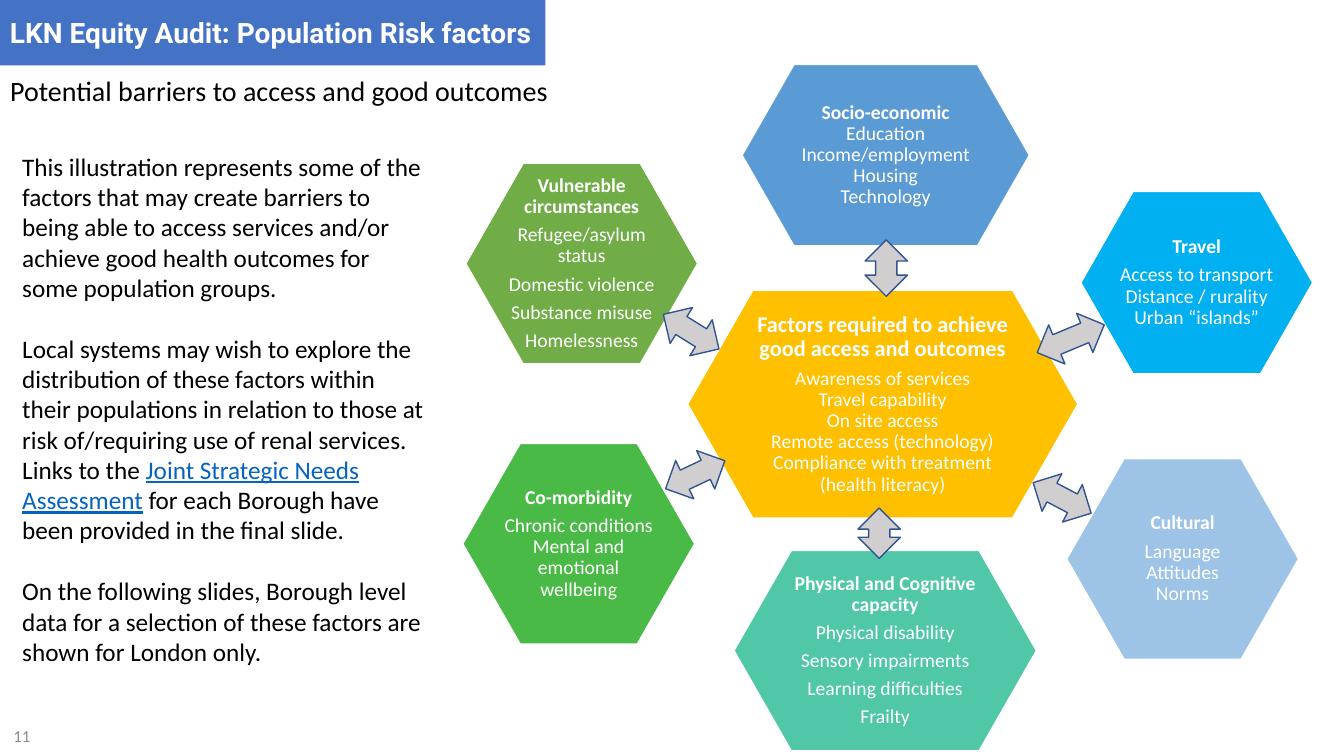
import pptx
import pptx.util
import pptx.dml.color
import pptx.enum.shapes
import pptx.enum.text
import lxml.etree

Inches = pptx.util.Inches
Pt = pptx.util.Pt
RGBColor = pptx.dml.color.RGBColor
Shape = pptx.enum.shapes.MSO_SHAPE
Align = pptx.enum.text.PP_ALIGN
Anchor = pptx.enum.text.MSO_ANCHOR
Fit = pptx.enum.text.MSO_AUTO_SIZE

WHITE = RGBColor(0xFF, 0xFF, 0xFF)
BLACK = RGBColor(0, 0, 0)
BLUE = RGBColor(0x44, 0x72, 0xC4)
LINK = RGBColor(0x05, 0x63, 0xC1)
GREY = RGBColor(0x8C, 0x8C, 0x8C)
SILVER = RGBColor(0xD0, 0xCE, 0xCE)
NAVY = RGBColor(0x32, 0x54, 0x91)
GOLD = RGBColor(0xFF, 0xC0, 0x00)
STEEL = RGBColor(0x5B, 0x9B, 0xD5)
PALE = RGBColor(0x9D, 0xC3, 0xE6)
TEAL = RGBColor(0x50, 0xC8, 0xA7)
SKY = RGBColor(0x00, 0xB0, 0xF0)
GREEN = RGBColor(0x4A, 0xBA, 0x46)
OLIVE = RGBColor(0x70, 0xAD, 0x47)

HEXES = [
    ((6.82, 2.88, 3.87, 2.26), GOLD, 16, 5, 0,
     ["Factors required to achieve good access and outcomes",
      "Awareness of services", "Travel capability", "On site access",
      "Remote access (technology)",
      "Compliance with treatment (health literacy)"]),
    ((7.36, 0.64, 2.85, 1.8), STEEL, 14, 0, 0,
     ["Socio-economic", "Education", "Income/employment", "Housing",
      "Technology"]),
    ((10.58, 4.55, 2.3, 1.99), PALE, 14, 5, 0,
     ["Cultural", "Language", "Attitudes", "Norms"]),
    ((7.28, 5.46, 3, 1.99), TEAL, 14, 5, 5,
     ["Physical and Cognitive capacity", "Physical disability",
      "Sensory impairments", "Learning difficulties", "Frailty"]),
    ((10.72, 1.9, 2.3, 1.81), SKY, 14, 5, 0,
     ["Travel", "Access to transport", "Distance / rurality",
      "Urban “islands”"]),
    ((4.59, 4.4, 2.3, 1.99), GREEN, 14, 5, 0,
     ["Co-morbidity", "Chronic conditions",
      "Mental and emotional wellbeing"]),
    ((4.62, 1.62, 2.3, 1.99), OLIVE, 14, 5, 5,
     ["Vulnerable circumstances", "Refugee/asylum status",
      "Domestic violence", "Substance misuse", "Homelessness"]),
]

ARROWS = [
    (8.51, 2.45, 0.56, 90), (8.47, 5.08, 0.5, 90),
    (10.26, 3.15, 0.72, 157.4), (6.53, 3.08, 0.65, 211.9),
    (6.57, 4.5, 0.65, 154.7), (10.21, 4.73, 0.65, 207.8),
]

STORY = [
    ["This illustration represents some of the factors that may create "
     "barriers to being able to access services and/or achieve good health "
     "outcomes for some population groups."],
    ["Local systems may wish to explore the distribution of these factors "
     "within their populations in relation to those at risk of/requiring "
     "use of renal services. Links to the ",
     "Joint Strategic Needs Assessment",
     " for each Borough have been provided in the final slide."],
    ["On the following slides, Borough level data for a selection of these "
     "factors are shown for London only."],
]


class Deck:
    face = "Calibri"

    def __init__(self):
        self.show = pptx.Presentation()
        self.show.slide_width = Inches(13.33)
        self.show.slide_height = Inches(7.5)
        self.slide = self.show.slides.add_slide(self.show.slide_layouts[1])

    def font(self, para, size, color, bold=False, face=None):
        para.font.name = face or self.face
        para.font.size = Pt(size)
        para.font.bold = bold
        para.font.color.rgb = color

    def place(self, shape, box):
        shape.left, shape.top, shape.width, shape.height = map(Inches, box)

    def shape(self, kind, box, fill, line=None):
        shape = self.slide.shapes.add_shape(kind, *map(Inches, box))
        shape.shadow.inherit = False
        shape.fill.solid()
        shape.fill.fore_color.rgb = fill
        if line is None:
            shape.line.fill.background()
        else:
            shape.line.color.rgb = line
            shape.line.width = Pt(1)
        return shape

    def banner(self, box, text):
        frame = self.shape(Shape.RECTANGLE, box, BLUE).text_frame
        frame.word_wrap = False
        frame.vertical_anchor = Anchor.MIDDLE
        para = frame.paragraphs[0]
        para.text = text
        para.alignment = Align.LEFT
        self.font(para, 20, WHITE, True, "Roboto")

    def title(self, box, text):
        title = self.slide.shapes.title
        self.place(title, box)
        frame = title.text_frame
        frame.auto_size = Fit.NONE
        frame.vertical_anchor = Anchor.MIDDLE
        para = frame.paragraphs[0]
        para.text = text
        para.alignment = Align.LEFT
        para.line_spacing = 0.9
        self.font(para, 20, BLACK)

    def body(self, box, story):
        body = self.slide.placeholders[1]
        self.place(body, box)
        frame = body.text_frame
        frame.auto_size = Fit.NONE
        frame.vertical_anchor = Anchor.TOP
        for at, parts in enumerate(story):
            para = frame.paragraphs[0] if at == 0 else frame.add_paragraph()
            props = para._p.get_or_add_pPr()
            props.set("marL", "0")
            props.set("indent", "0")
            lxml.etree.SubElement(props, pptx.oxml.ns.qn("a:buNone"))
            para.space_before = Pt(22 if at else 0)
            self.font(para, 18, BLACK)
            for spot, part in enumerate(parts):
                run = para.add_run()
                run.text = part
                if spot == 1:
                    run.font.color.rgb = LINK
                    run.font.underline = True

    def hexagon(self, box, fill, size, gap, step, lines):
        shape = self.shape(Shape.HEXAGON, box, fill, WHITE)
        shape.adjustments[0] = 0.286
        frame = shape.text_frame
        frame.word_wrap = True
        frame.vertical_anchor = Anchor.MIDDLE
        frame.margin_left = frame.margin_right = Inches(0.02)
        frame.margin_top = frame.margin_bottom = Inches(0.02)
        for at, line in enumerate(lines):
            para = frame.paragraphs[0] if at == 0 else frame.add_paragraph()
            para.text = line
            para.alignment = Align.CENTER
            para.line_spacing = 0.9
            if line != lines[-1]:
                para.space_after = Pt(step if at else gap)
            self.font(para, 14 if at else size, WHITE, at == 0)

    def arrow(self, left, top, width, turn):
        box = (left, top, width, 0.42)
        shape = self.shape(Shape.LEFT_RIGHT_ARROW, box, SILVER, NAVY)
        shape.rotation = turn

    def number(self, box, text):
        frame = self.slide.shapes.add_textbox(*map(Inches, box)).text_frame
        frame.word_wrap = True
        frame.vertical_anchor = Anchor.MIDDLE
        para = frame.paragraphs[0]
        para.text = text
        para.alignment = Align.RIGHT
        self.font(para, 12, GREY)


def main():
    deck = Deck()
    deck.banner((0, 0, 5.41, 0.65), "LKN Equity Audit: Population Risk factors")
    deck.title((0, 0.69, 8.31, 0.46),
               "Potential barriers to access and good outcomes")
    for item in HEXES:
        deck.hexagon(*item)
    for item in ARROWS:
        deck.arrow(*item)
    deck.body((0.12, 1.45, 4.22, 5.25), STORY)
    deck.number((0, 7.1, 0.4, 0.4), "11")
    deck.show.save("out.pptx")


if __name__ == "__main__":
    main()
